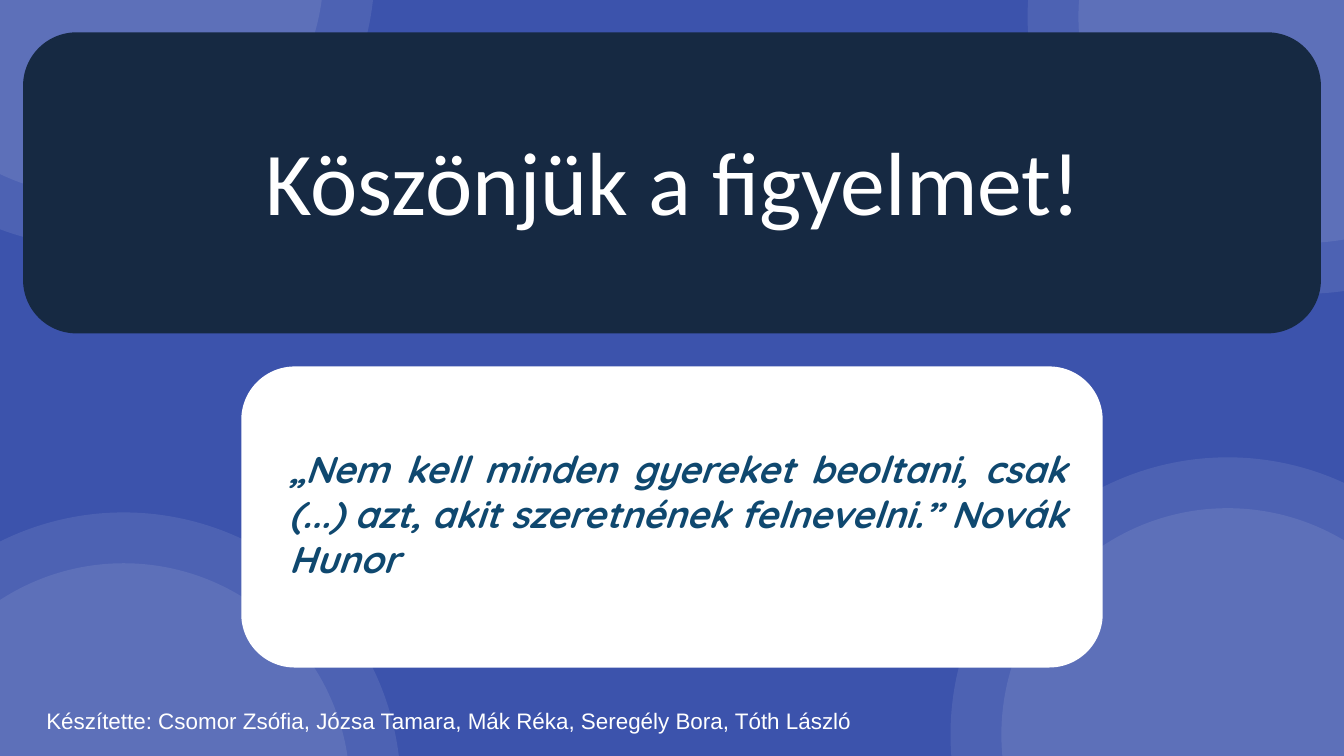
from lxml import etree
from pptx import Presentation
from pptx.dml.color import RGBColor
from pptx.enum.shapes import MSO_SHAPE as Shape
from pptx.enum.text import MSO_ANCHOR as Anchor, PP_ALIGN as Align
from pptx.oxml.ns import qn
from pptx.util import Pt


def color(value):
    return RGBColor.from_string(value)


def add_filled(kind, left, top, width, height, fill):
    shape = slide.shapes.add_shape(kind, Pt(left), Pt(top), Pt(width), Pt(height))
    shape.shadow.inherit = False
    shape.fill.solid()
    shape.fill.fore_color.rgb = color(fill)
    shape.line.fill.background()
    return shape


presentation = Presentation()
presentation.slide_width, presentation.slide_height = Pt(1440), Pt(810)
slide = presentation.slides.add_slide(presentation.slide_layouts[5])

# Background with translucent rings in the corners
slide.background.fill.solid()
slide.background.fill.fore_color.rgb = color("3C53AC")
for center_x, center_y in [(104.4, -32.4), (1315.4, 787), (132.5, 846), (1398, 17.8)]:
    for radius in (297, 242.5):
        circle = add_filled(Shape.OVAL, center_x - radius, center_y - radius,
                            2 * radius, 2 * radius, "FFFFFF")
        tint = circle.fill._xPr.find(qn("a:solidFill"))[0]
        etree.SubElement(tint, qn("a:alpha"), val="9000")

# Title and quote panels, centred on the slide
panel_height, corner_radius = 322.6, 57.3
for top, width, fill in [(34.6, 1390.6, "162942"), (392.6, 923, "FFFFFF")]:
    panel = add_filled(Shape.ROUNDED_RECTANGLE, (1440 - width) / 2, top,
                       width, panel_height, fill)
    panel.adjustments[0] = corner_radius / panel_height

# Title, brought in front of its panel
title = slide.shapes.title
slide.shapes._spTree.append(title._element)
title.left, title.top, title.width, title.height = Pt(42.5), Pt(49), Pt(1358), Pt(286.6)
title.text_frame.text = "Köszönjük a figyelmet!"
title.text_frame.vertical_anchor = Anchor.MIDDLE

# Quote and authors
quote = slide.shapes.add_textbox(Pt(291.6), Pt(474.5), Pt(858.2), Pt(186.5))
quote.text_frame.text = ("„Nem kell minden gyereket beoltani, csak (...) azt, "
                         "akit szeretnének felnevelni.” Novák Hunor")
quote.text_frame.margin_left = Pt(18)
authors = slide.shapes.add_textbox(Pt(42.5), Pt(753.8), Pt(951.8), Pt(36))
authors.text_frame.text = ("Készítette: Csomor Zsófia, Józsa Tamara, Mák Réka, "
                           "Seregély Bora, Tóth László")

# Text formatting
for shape, align, size, name, text_color, emphasis in [
    (title, Align.CENTER, 96, "Calibri", "FFFFFF", False),
    (quote, Align.JUSTIFY, 40, "Quicksand", "0F486F", True),
    (authors, Align.LEFT, 24, "Arial", "FFFFFF", False),
]:
    shape.text_frame.word_wrap = True
    paragraph = shape.text_frame.paragraphs[0]
    paragraph.alignment = align
    font = paragraph.runs[0].font
    font.size, font.name = Pt(size), name
    font.bold = font.italic = emphasis
    font.color.rgb = color(text_color)

presentation.save("out.pptx")
